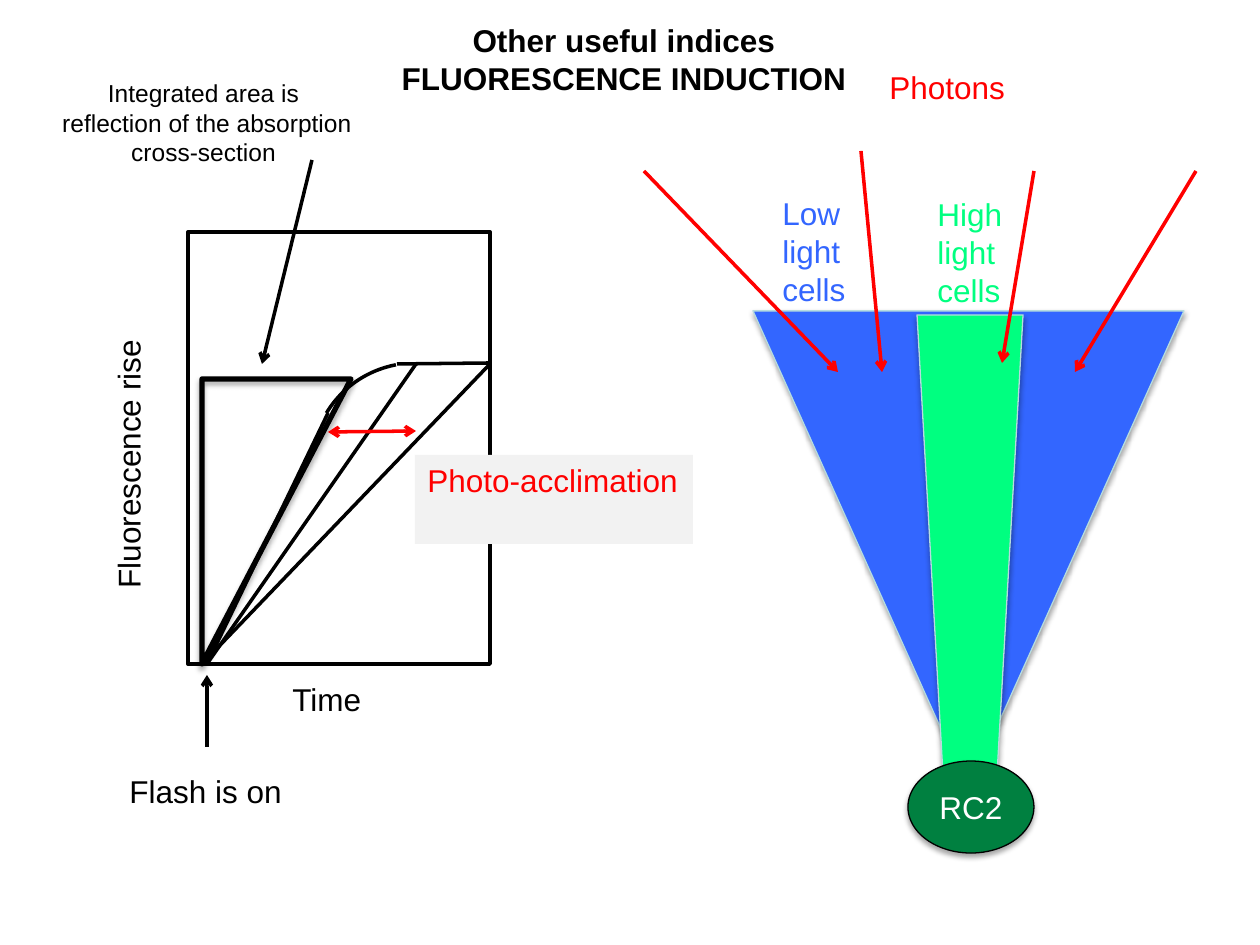
from lxml import etree
from pptx import Presentation
from pptx import util as u
from pptx.dml.color import RGBColor
from pptx.enum import shapes, text
from pptx.oxml.ns import qn

PX = 914400 / 126
FONT = "Arial"
COLORS = {
    "black": "000000", "white": "FFFFFF", "red": "FF0000", "blue": "3366FF",
    "lime": "00FF80", "green": "008040", "grey": "F2F2F2", "edge": "B6DCDF",
}
SHAPE = shapes.MSO_SHAPE
CENTER = text.PP_ALIGN.CENTER


def px(*values):
    return [u.Emu(round(v * PX)) for v in values]


def rgb(name):
    return RGBColor.from_string(COLORS[name])


def write(tf, content, size=18, color="black", bold=False, align=text.PP_ALIGN.LEFT,
          anchor=text.MSO_ANCHOR.TOP, wrap=False):
    tf.word_wrap = wrap
    tf.auto_size = text.MSO_AUTO_SIZE.NONE
    tf.vertical_anchor = anchor
    for i, line in enumerate(content.split("\n")):
        p = tf.paragraphs[0] if i == 0 else tf.add_paragraph()
        p.alignment = align
        r = p.add_run()
        r.text = line
        r.font.name = FONT
        r.font.size = u.Pt(size)
        r.font.bold = bold
        r.font.color.rgb = rgb(color)


class Diagram:
    def __init__(self, prs):
        self.s = prs.slides.add_slide(prs.slide_layouts[5])

    def title(self, content, box):
        sp = self.s.shapes.title
        sp.left, sp.top, sp.width, sp.height = px(*box)
        write(sp.text_frame, content, bold=True, align=CENTER)

    def label(self, content, box, rotation=0, **fmt):
        sp = self.s.shapes.add_textbox(*px(*box))
        sp.rotation = rotation
        write(sp.text_frame, content, **fmt)

    def shape(self, kind, box, fill=None, line=None, width=0.75, flip=None, shadow=False):
        sp = self.s.shapes.add_shape(kind, *px(*box))
        sp.shadow.inherit = False
        if fill:
            sp.fill.solid()
            sp.fill.fore_color.rgb = rgb(fill)
        else:
            sp.fill.background()
        if line:
            sp.line.color.rgb = rgb(line)
            sp.line.width = u.Pt(width)
        else:
            sp.line.fill.background()
        spPr = sp._element.spPr
        if flip:
            spPr.find(qn("a:xfrm")).set(flip, "1")
        if shadow:
            shd = etree.SubElement(
                spPr.find(qn("a:effectLst")), qn("a:outerShdw"), blurRad=str(u.Pt(3.1)),
                dist=str(u.Pt(1.8)), dir="5400000", rotWithShape="0")
            clr = etree.SubElement(shd, qn("a:srgbClr"), val=COLORS["black"])
            etree.SubElement(clr, qn("a:alpha"), val="35000")
        return sp

    def line(self, ends, color="black", arrows=()):
        cn = self.s.shapes.add_connector(shapes.MSO_CONNECTOR.STRAIGHT, *px(*ends))
        cn.line.color.rgb = rgb(color)
        cn.line.width = u.Pt(2)
        ln = cn.line._get_or_add_ln()
        for end in arrows:
            etree.SubElement(ln, qn("a:" + end), type="arrow")
        etree.SubElement(cn._element.spPr, qn("a:effectLst"))


def main():
    prs = Presentation()
    prs.slide_width, prs.slide_height = u.Inches(10), u.Inches(7.5)
    d = Diagram(prs)
    tail = ("tailEnd",)

    d.title("Other useful indices\nFLUORESCENCE INDUCTION", (387, 15, 474, 89))

    d.shape(SHAPE.ISOSCELES_TRIANGLE, (753, 311, 431, 479), "blue", "edge",
            flip="flipV", shadow=True)

    arc = d.shape(SHAPE.ARC, (312, 363, 207, 204), line="black", width=2, flip="flipH")
    arc.adjustments[0], arc.adjustments[1] = 168.64, 197.86
    for ends in ((328, 413, 207, 664), (397, 364, 490, 363)):
        d.line(ends)
    d.shape(SHAPE.RECTANGLE, (188, 232, 302, 432), line="black", width=2.25)
    d.label("Time", (280, 674, 95, 50))
    d.label("Fluorescence rise", (-10, 438, 276, 50), rotation=270)
    d.shape(SHAPE.RIGHT_TRIANGLE, (202, 379, 149, 285), line="black", width=3,
            flip="flipV", shadow=True)
    d.line((312, 160, 262, 364), arrows=tail)
    d.label("Integrated area is \nreflection of the absorption\ncross-section ",
            (48, 72, 318, 102), size=14, align=CENTER)
    d.line((207, 747, 207, 675), arrows=tail)
    d.label("Flash is on", (117, 766, 179, 50))

    d.shape(SHAPE.TRAPEZOID, (917, 315, 106, 469), "lime", "edge", flip="flipV", shadow=True)
    rc = d.shape(SHAPE.OVAL, (908, 761, 126, 92), "green", "black", shadow=True)
    write(rc.text_frame, "RC2", color="white", align=CENTER,
          anchor=text.MSO_ANCHOR.MIDDLE, wrap=True)
    d.label("High\nlight\ncells", (925, 189, 91, 127), color="lime")
    d.label("Low\nlight\ncells", (770, 188, 91, 127), color="blue")

    for ends in ((202, 664, 490, 364), (207, 664, 416, 364)):
        d.line(ends)
    d.line((328, 432, 416, 431), "red", ("headEnd", "tailEnd"))
    panel = d.shape(SHAPE.RECTANGLE, (415, 455, 278, 89), "grey")
    write(panel.text_frame, "Photo-acclimation", color="red", wrap=True)

    for photon in ((644, 171, 838, 372), (861, 151, 882, 372),
                   (1034, 171, 1002, 363), (1196, 171, 1075, 372)):
        d.line(photon, "red", tail)
    d.label("Photons", (877, 62, 278, 89), color="red", wrap=True)

    prs.save("out.pptx")


if __name__ == "__main__":
    main()
